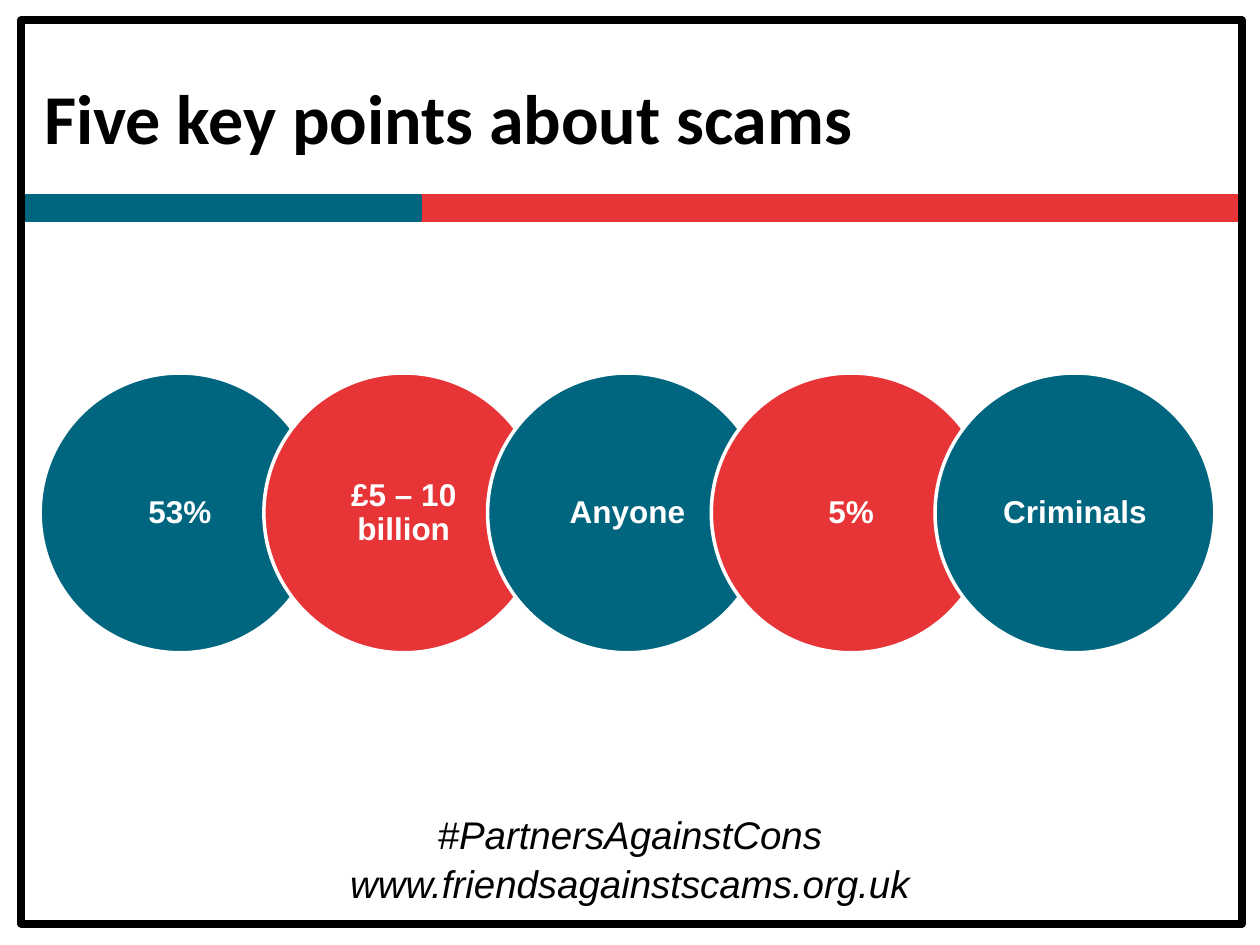
from pptx import Presentation
from pptx import util as u
from pptx.dml.color import RGBColor
from pptx.enum import shapes, text
from pptx.oxml.ns import qn
from lxml import etree

TEAL, RED, BLACK, WHITE = "006680", "E73437", "000000", "FFFFFF"
TITLE = "Five key points about scams"
KEY_POINTS = ["53%", "£5 – 10 billion", "Anyone", "5%", "Criminals"]
FOOTER = ["#PartnersAgainstCons", "www.friendsagainstscams.org.uk"]
BARS = [(1.07, 23.98, RED), (0.43, 8.05, TEAL)]

CIRCLE_LEFT, CIRCLE_TOP, DIAMETER, PITCH = 0.81, 7.52, 5.64, 4.51
FOOTER_TOP, FOOTER_PITCH = 16.23, 0.99


def colour(value):
    return RGBColor.from_string(value)


def box(left, top, width, height):
    return [u.Cm(value) for value in (left, top, width, height)]


def add_outlined(slide, kind, place, fill, line, line_width):
    shape = slide.shapes.add_shape(kind, *box(*place))
    shape.shadow.inherit = False
    if fill:
        shape.fill.solid()
        shape.fill.fore_color.rgb = colour(fill)
    else:
        shape.fill.background()
    shape.line.color.rgb = colour(line)
    shape.line.width = u.Pt(line_width)
    return shape


def write(shape, words, size, font_name, font_colour, align, bold=False, italic=False):
    paragraph = shape.text_frame.paragraphs[0]
    paragraph.alignment = align
    run = paragraph.add_run()
    run.text = words
    run.font.size = u.Pt(size)
    run.font.name = font_name
    run.font.bold = bold
    run.font.italic = italic
    run.font.color.rgb = colour(font_colour)
    return paragraph


def main():
    presentation = Presentation()
    presentation.slide_width, presentation.slide_height = u.Cm(25.4), u.Cm(19.05)
    slide = presentation.slides.add_slide(presentation.slide_layouts[5])
    center = text.PP_ALIGN.CENTER
    rectangle = shapes.MSO_SHAPE.RECTANGLE

    title = slide.shapes.title
    title.left, title.top, title.width, title.height = box(0.64, 0.76, 23.93, 3.18)
    title.text_frame.vertical_anchor = text.MSO_ANCHOR.MIDDLE
    write(title, TITLE, 40, "Calibri", BLACK, text.PP_ALIGN.LEFT, bold=True)

    for left, width, fill in BARS:
        add_outlined(slide, rectangle, (left, 3.94, width, 0.51), fill, fill, 2)
    frame = add_outlined(slide, rectangle, (0.43, 0.41, 24.61, 18.21), None, BLACK, 4.5)
    etree.SubElement(frame.line._get_or_add_ln(), qn("a:round"))

    for index, words in enumerate(FOOTER):
        place = box(0, FOOTER_TOP + index * FOOTER_PITCH, 25.4, 1.19)
        footer = slide.shapes.add_textbox(*place)
        footer.text_frame.word_wrap = True
        write(footer, words, 22, "Arial", BLACK, center, italic=True)

    for index, words in enumerate(KEY_POINTS):
        place = (CIRCLE_LEFT + index * PITCH, CIRCLE_TOP, DIAMETER, DIAMETER)
        fill = RED if index % 2 else TEAL
        circle = add_outlined(slide, shapes.MSO_SHAPE.OVAL, place, fill, WHITE, 2)
        frame_text = circle.text_frame
        frame_text.word_wrap = True
        frame_text.vertical_anchor = text.MSO_ANCHOR.MIDDLE
        frame_text.margin_left = frame_text.margin_right = u.Cm(0.3)
        frame_text.margin_top = frame_text.margin_bottom = u.Cm(0.08)
        paragraph = write(circle, words, 18, "Arial", WHITE, center, bold=True)
        paragraph.line_spacing = 0.9

    presentation.save("out.pptx")


if __name__ == "__main__":
    main()
